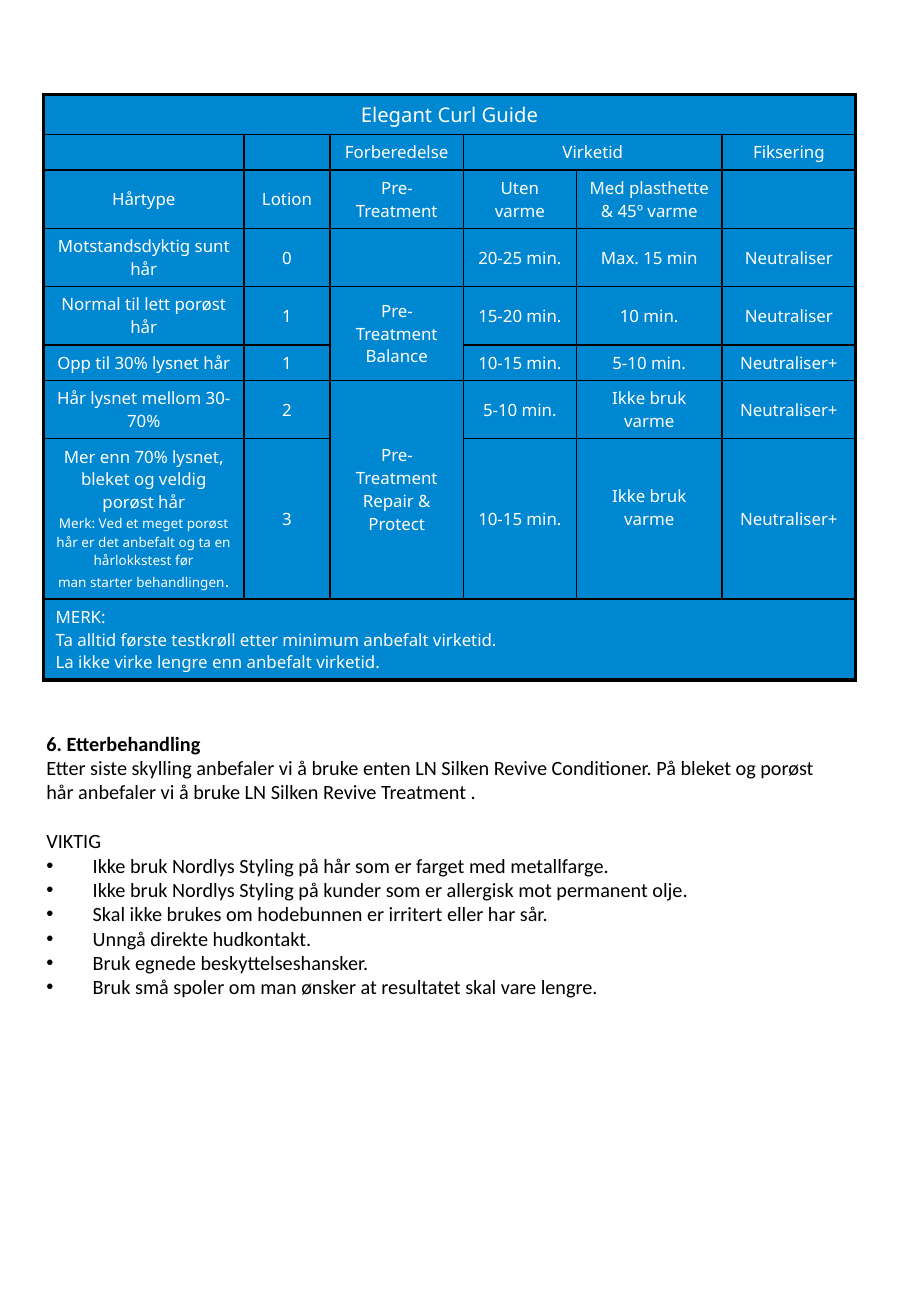
from pptx import Presentation
from pptx.dml.color import RGBColor
from pptx.enum.text import MSO_ANCHOR as Anchor, PP_ALIGN as Align
from pptx.oxml import parse_xml
from pptx.oxml.ns import nsdecls
from pptx.util import Cm, Pt


def color(hex_code):
    return RGBColor.from_string(hex_code)


def style_runs(paragraph, font_name, size, hex_code, bold=False):
    for run in paragraph.runs:
        run.font.name = font_name
        run.font.size = Pt(size)
        run.font.bold = bold
        run.font.color.rgb = color(hex_code)


prs = Presentation()
prs.slide_width, prs.slide_height = Cm(19.05), Cm(27.51)
slide = prs.slides.add_slide(prs.slide_layouts[6])

# Treatment guide
guide_rows = [
    ["Elegant Curl Guide", "", "", "", "", ""],
    ["", "", "Forberedelse", "Virketid", "", "Fiksering"],
    ["Hårtype", "Lotion", "Pre-Treatment", "Uten varme",
     "Med plasthette & 45º varme", ""],
    ["Motstandsdyktig sunt hår", "0", "", "20-25 min.", "Max. 15 min",
     "Neutraliser"],
    ["Normal til lett porøst hår", "1", "Pre-Treatment Balance",
     "15-20 min.", "10 min.", "Neutraliser"],
    ["Opp til 30% lysnet hår", "1", "", "10-15 min.", "5-10 min.",
     "Neutraliser+"],
    ["Hår lysnet mellom 30-70%", "2", "Pre-Treatment Repair & Protect",
     "5-10 min.", "Ikke bruk varme", "Neutraliser+"],
    ["Mer enn 70% lysnet, bleket og veldig porøst hår\n"
     "Merk: Ved et meget porøst hår er det anbefalt og ta en hårlokkstest før\n"
     "man starter behandlingen.",
     "3", "", "10-15 min.", "Ikke bruk varme", "Neutraliser+"],
    ["MERK:\n"
     "Ta alltid første testkrøll etter minimum anbefalt virketid.\n"
     "La ikke virke lengre enn anbefalt virketid.", "", "", "", "", ""],
]
col_widths = [4.19, 1.8, 2.79, 2.36, 3.05, 2.79]
row_heights = [0.81, 0.74, 1.22, 1.22, 1.22, 0.74, 1.22, 3.35, 1.66]
last_row, last_col = len(row_heights) - 1, len(col_widths) - 1

guide = slide.shapes.add_table(
    len(row_heights), len(col_widths), Cm(0.91), Cm(1.98),
    Cm(sum(col_widths)), Cm(sum(row_heights))).table
for column, width in zip(guide.columns, col_widths):
    column.width = Cm(width)
for row, height in zip(guide.rows, row_heights):
    row.height = Cm(height)

merges = [((0, 0), (0, last_col)), ((1, 3), (1, 4)), ((4, 2), (5, 2)),
          ((6, 2), (7, 2)), ((last_row, 0), (last_row, last_col))]
for first, last in merges:
    guide.cell(*first).merge(guide.cell(*last))

for r, texts in enumerate(guide_rows):
    for c, text in enumerate(texts):
        cell = guide.cell(r, c)
        right_col = c + cell.span_width - 1 if cell.is_merge_origin else c
        outer_edges = {"L": c == 0, "R": right_col == last_col,
                       "T": r == 0, "B": r == last_row}
        for side, is_outer in outer_edges.items():
            width = Pt(2.25 if is_outer else 1)
            cell._tc.get_or_add_tcPr().append(parse_xml(
                f'<a:ln{side} {nsdecls("a")} w="{width}"><a:solidFill>'
                f'<a:srgbClr val="000000"/></a:solidFill></a:ln{side}>'))
        cell.fill.solid()
        cell.fill.fore_color.rgb = color("0087D1")
        cell.vertical_anchor = Anchor.MIDDLE
        cell.text_frame.text = text
        for i, paragraph in enumerate(cell.text_frame.paragraphs):
            is_hair_note = r == 7 and i > 0
            size = 12 if r == 0 else 8 if is_hair_note else 10
            paragraph.alignment = Align.LEFT if r == last_row else Align.CENTER
            style_runs(paragraph, "Noto Sans", size, "FFFFFF")
            # Keeps empty cells from stretching their row
            paragraph._p.get_or_add_endParaRPr().set("sz", "1000")

hair_note_end = guide.cell(7, 0).text_frame.paragraphs[-1]
hair_note_end.runs[0].text = "man starter behandlingen"
full_stop = hair_note_end.add_run()
full_stop.text = "."
style_runs(hair_note_end, "Noto Sans", 8, "FFFFFF")
full_stop.font.size = Pt(10)
guide.cell(7, 4).margin_bottom = Cm(0.61)

# Aftercare and warnings
heading = "6. Etterbehandling"
warning_title = "VIKTIG"
aftercare = [
    heading,
    "Etter siste skylling anbefaler vi å bruke enten LN Silken Revive "
    "Conditioner. På bleket og porøst",
    "hår anbefaler vi å bruke LN Silken Revive Treatment .",
    warning_title,
]
warnings = [
    "Ikke bruk Nordlys Styling på hår som er farget med metallfarge.",
    "Ikke bruk Nordlys Styling på kunder som er allergisk mot permanent olje.",
    "Skal ikke brukes om hodebunnen er irritert eller har sår.",
    "Unngå direkte hudkontakt.",
    "Bruk egnede beskyttelseshansker.",
    "Bruk små spoler om man ønsker at resultatet skal vare lengre.",
]
advice = slide.shapes.add_textbox(
    Cm(0.72), Cm(15.16), Cm(17.2), Cm(5.9)).text_frame
advice.word_wrap = True
advice.text = "\n".join(aftercare + warnings)
for paragraph in advice.paragraphs:
    style_runs(paragraph, "Calibri", 12, "000000", paragraph.text == heading)
    if paragraph.text == warning_title:
        paragraph.space_before = Pt(14.6)
    if paragraph.text in warnings:
        properties = paragraph._p.get_or_add_pPr()
        properties.set("marL", str(Cm(0.97)))
        properties.set("indent", str(Cm(-0.97)))
        properties.append(parse_xml(
            f'<a:buFont {nsdecls("a")} typeface="Arial"/>'))
        properties.append(parse_xml(f'<a:buChar {nsdecls("a")} char="•"/>'))

prs.save("out.pptx")
